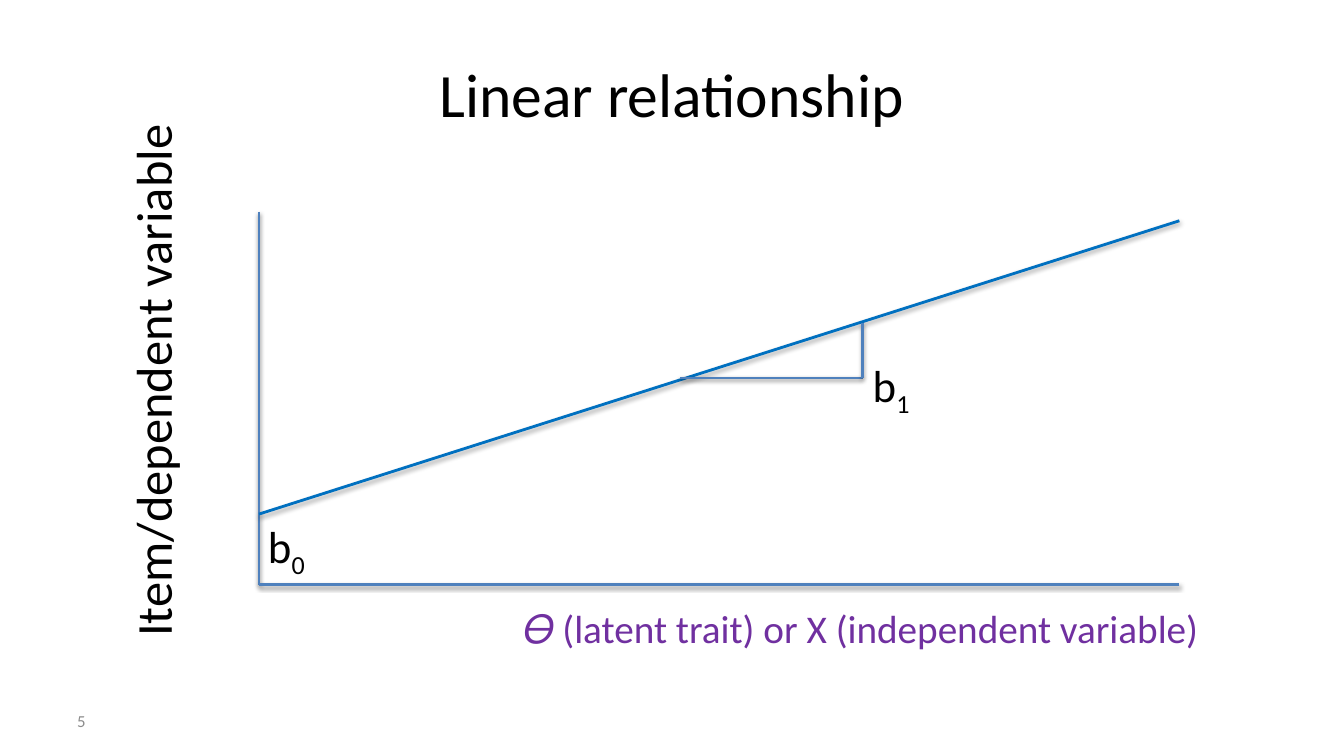
from dataclasses import dataclass

import lxml.etree
import pptx
import pptx.dml.color
import pptx.enum.shapes
import pptx.enum.text
import pptx.oxml.ns
import pptx.util

Pt = pptx.util.Pt
ALIGN = pptx.enum.text.PP_ALIGN
ANCHOR = pptx.enum.text.MSO_ANCHOR
AUTO_SIZE = pptx.enum.text.MSO_AUTO_SIZE

FONT = "Calibri"
BLACK, GREY, PURPLE = "000000", "8C8C8C", "7030A0"
AXIS_BLUE, TREND_BLUE = "4F81BD", "0070C0"

# Corners of the graph, in points
LEFT, RIGHT, TOP, BASE = 185.0, 842.4, 151.2, 417.6
TREND_LOW, TREND_HIGH = 367.2, 157.7
STEP_LEFT, STEP_RIGHT, STEP_TOP, STEP_BASE = 486.0, 616.3, 230.4, 270.0


@dataclass
class Line:
    start: tuple[float, float]
    end: tuple[float, float]
    color: str = AXIS_BLUE


@dataclass
class Coefficient:
    left: float
    top: float
    index: str


LINES = [
    Line((LEFT, TOP), (LEFT, BASE)),
    Line((RIGHT, BASE), (LEFT, BASE)),
    Line((RIGHT, TREND_HIGH), (LEFT, TREND_LOW), TREND_BLUE),
    Line((STEP_LEFT, STEP_BASE), (STEP_RIGHT, STEP_BASE)),
    Line((STEP_RIGHT, STEP_TOP), (STEP_RIGHT, STEP_BASE)),
]

COEFFICIENTS = [
    Coefficient(184.3, TREND_LOW, "0"),
    Coefficient(STEP_RIGHT, 252, "1"),
]


def rgb(value: str) -> pptx.dml.color.RGBColor:
    return pptx.dml.color.RGBColor.from_string(value)


def add_text(page, text: str, *, left: float, top: float, width: float,
             height: float, size: float, color: str = BLACK, subscript: str = "",
             align=ALIGN.LEFT, anchor=ANCHOR.TOP, wrap: bool = True,
             grow: bool = False, rotation: float = 0) -> None:
    box = page.shapes.add_textbox(Pt(left), Pt(top), Pt(width), Pt(height))
    box.rotation = rotation
    frame = box.text_frame
    frame.word_wrap = wrap
    frame.vertical_anchor = anchor
    frame.auto_size = AUTO_SIZE.SHAPE_TO_FIT_TEXT if grow else AUTO_SIZE.NONE
    para = frame.paragraphs[0]
    para.alignment = align
    for words in filter(None, (text, subscript)):
        span = para.add_run()
        span.text = words
        span.font.name = FONT
        span.font.size = Pt(size)
        span.font.color.rgb = rgb(color)
    if subscript:
        span.font._element.set("baseline", "-25000")


def add_shadow(connector) -> None:
    qn = pptx.oxml.ns.qn
    effects = lxml.etree.SubElement(connector._element.spPr, qn("a:effectLst"))
    shadow = lxml.etree.SubElement(
        effects, qn("a:outerShdw"), blurRad=str(Pt(3.1)), dist=str(Pt(1.6)),
        dir="5400000", rotWithShape="0")
    tint = lxml.etree.SubElement(shadow, qn("a:srgbClr"), val=BLACK)
    lxml.etree.SubElement(tint, qn("a:alpha"), val="38000")


def add_line(page, line: Line) -> None:
    connector = page.shapes.add_connector(
        pptx.enum.shapes.MSO_CONNECTOR.STRAIGHT,
        *(Pt(value) for value in line.start + line.end))
    connector.line.color.rgb = rgb(line.color)
    connector.line.width = Pt(2)
    add_shadow(connector)


def main() -> None:
    deck = pptx.Presentation()
    deck.slide_width, deck.slide_height = Pt(960), Pt(540)
    page = deck.slides.add_slide(deck.slide_layouts[6])

    # Title and page number
    add_text(page, "Linear relationship", left=48, top=21.6, width=864, height=90,
             size=44, align=ALIGN.CENTER, anchor=ANCHOR.MIDDLE)
    add_text(page, "5", left=48, top=500.4, width=224, height=28.8,
             size=12, color=GREY, anchor=ANCHOR.MIDDLE)

    # Axes, trend and slope step
    for line in LINES:
        add_line(page, line)

    # Axis labels
    add_text(page, "Item/dependent variable", left=-82.8, top=244.8, width=383,
             height=51.1, size=36, wrap=False, grow=True, rotation=270)
    add_text(page, "𝛳 (latent trait) or X (independent variable)", left=366.5,
             top=428.4, width=499, height=41, size=28, color=PURPLE, grow=True)

    # Intercept and slope
    for item in COEFFICIENTS:
        add_text(page, "b", subscript=item.index, left=item.left, top=item.top,
                 width=42.5, height=46.1, size=32, wrap=False, grow=True)

    deck.save("out.pptx")


if __name__ == "__main__":
    main()
